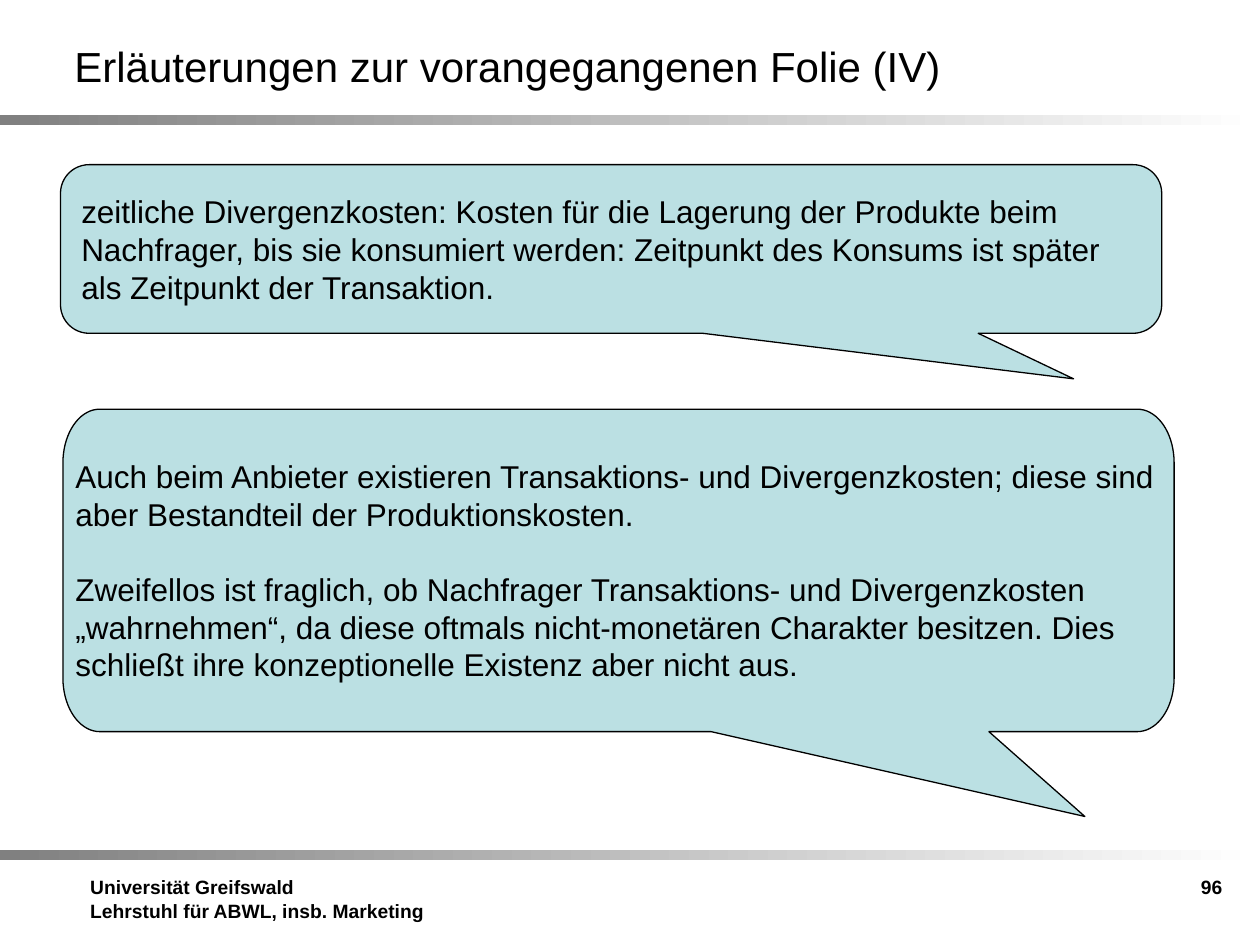
from dataclasses import dataclass
from math import cos, radians, sin

from pptx import Presentation
from pptx.dml.color import RGBColor
from pptx.enum import shapes, text
from pptx.util import Cm, Pt


@dataclass(frozen=True)
class Theme:
    font: str = "Arial"
    ink: RGBColor = RGBColor(0, 0, 0)
    bubble: RGBColor = RGBColor(0xBB, 0xE0, 0xE3)
    bar_start: RGBColor = RGBColor(0x80, 0x80, 0x80)
    bar_end: RGBColor = RGBColor(0xFF, 0xFF, 0xFF)
    title: Pt = Pt(24)
    body: Pt = Pt(18)
    footer: Pt = Pt(11)
    outline: Pt = Pt(0.75)


THEME = Theme()
SLIDE_WIDTH, SLIDE_HEIGHT = 25.4, 19.05


def write(shape, *paragraphs, size=THEME.body, bold=False, gap=Pt(0),
          align=text.PP_ALIGN.LEFT, anchor=text.MSO_ANCHOR.MIDDLE):
    frame = shape.text_frame
    frame.word_wrap = True
    frame.vertical_anchor = anchor
    for index, wording in enumerate(paragraphs):
        paragraph = frame.add_paragraph() if index else frame.paragraphs[0]
        paragraph.alignment = align
        if index:
            paragraph.space_before = gap
        run = paragraph.add_run()
        run.text = wording
        run.font.name = THEME.font
        run.font.size = size
        run.font.bold = bold
        run.font.color.rgb = THEME.ink


def add_label(slide, box, *paragraphs, **style):
    label = slide.shapes.add_textbox(*map(Cm, box))
    write(label, *paragraphs, **style)


def add_bar(slide, top):
    bar = slide.shapes.add_shape(
        shapes.MSO_SHAPE.RECTANGLE, 0, Cm(top), Cm(SLIDE_WIDTH), Cm(0.2))
    bar.shadow.inherit = False
    bar.line.fill.background()
    bar.fill.gradient()
    bar.fill.gradient_angle = 0
    colours = (THEME.bar_start, THEME.bar_end)
    for position, (stop, colour) in enumerate(zip(bar.fill.gradient_stops, colours)):
        stop.position = position
        stop.color.rgb = colour


def style_bubble(bubble):
    bubble.shadow.inherit = False
    bubble.fill.solid()
    bubble.fill.fore_color.rgb = THEME.bubble
    bubble.line.color.rgb = THEME.ink
    bubble.line.width = THEME.outline


def add_callout(slide, box, adjustments, *paragraphs):
    callout = slide.shapes.add_shape(
        shapes.MSO_SHAPE.ROUNDED_RECTANGULAR_CALLOUT, *map(Cm, box))
    for index, value in enumerate(adjustments):
        callout.adjustments[index] = value
    style_bubble(callout)
    write(callout, *paragraphs)


def corner(centre_x, centre_y, radius_x, radius_y, start):
    angles = [radians(start + step) for step in range(0, 91, 5)]
    return [(centre_x + radius_x * cos(a), centre_y + radius_y * sin(a))
            for a in angles]


def add_oval_corner_callout(slide, box, radii, tip, *paragraphs, **style):
    left, top, width, height = box
    radius_x, radius_y = radii
    bottom = top + height
    near_left, near_right = left + radius_x, left + width - radius_x
    near_top, near_bottom = top + radius_y, bottom - radius_y
    tail = [(left + width * 10 / 12, bottom), tip, (left + width * 7 / 12, bottom)]
    outline = (corner(near_left, near_top, *radii, 180)
               + corner(near_right, near_top, *radii, 270)
               + corner(near_right, near_bottom, *radii, 0)
               + tail
               + corner(near_left, near_bottom, *radii, 90))
    points = [(Cm(x), Cm(y)) for x, y in outline]
    builder = slide.shapes.build_freeform(*points[0], scale=1.0)
    builder.add_line_segments(points[1:], close=True)
    callout = builder.convert_to_shape()
    style_bubble(callout)
    write(callout, *paragraphs, **style)
    callout.text_frame.margin_bottom = Cm(tip[1] - bottom + 0.13)


def main():
    presentation = Presentation()
    presentation.slide_width = Cm(SLIDE_WIDTH)
    presentation.slide_height = Cm(SLIDE_HEIGHT)
    slide = presentation.slides.add_slide(presentation.slide_layouts[6])

    for top in (2.32, 17.13):
        add_bar(slide, top)

    add_label(slide, (1.57, 17.53, 7.39, 1.5),
              "Universität Greifswald", "Lehrstuhl für ABWL, insb. Marketing",
              size=THEME.footer, bold=True, anchor=text.MSO_ANCHOR.TOP)

    add_oval_corner_callout(
        slide, (1.27, 8.25, 22.4, 6.5), (0.74, 1.08), (21.87, 16.46),
        "Auch beim Anbieter existieren Transaktions- und Divergenzkosten; "
        "diese sind aber Bestandteil der Produktionskosten.",
        "Zweifellos ist fraglich, ob Nachfrager Transaktions- und Divergenzkosten "
        "„wahrnehmen“, da diese oftmals nicht-monetären Charakter besitzen. "
        "Dies schließt ihre konzeptionelle Existenz aber nicht aus.",
        gap=Pt(21))

    add_callout(
        slide, (1.22, 3.32, 22.2, 3.4), (0.42, 0.77, 0.17),
        "zeitliche Divergenzkosten: Kosten für die Lagerung der Produkte beim "
        "Nachfrager, bis sie konsumiert werden: Zeitpunkt des Konsums ist später "
        "als Zeitpunkt der Transaktion.")

    add_label(slide, (18.97, 17.53, 5.92, 1.45), "96",
              size=THEME.footer, bold=True,
              align=text.PP_ALIGN.RIGHT, anchor=text.MSO_ANCHOR.TOP)
    add_label(slide, (1.25, 0.53, 22.86, 1.6),
              "Erläuterungen zur vorangegangenen Folie (IV)", size=THEME.title)

    presentation.save("out.pptx")


if __name__ == "__main__":
    main()
